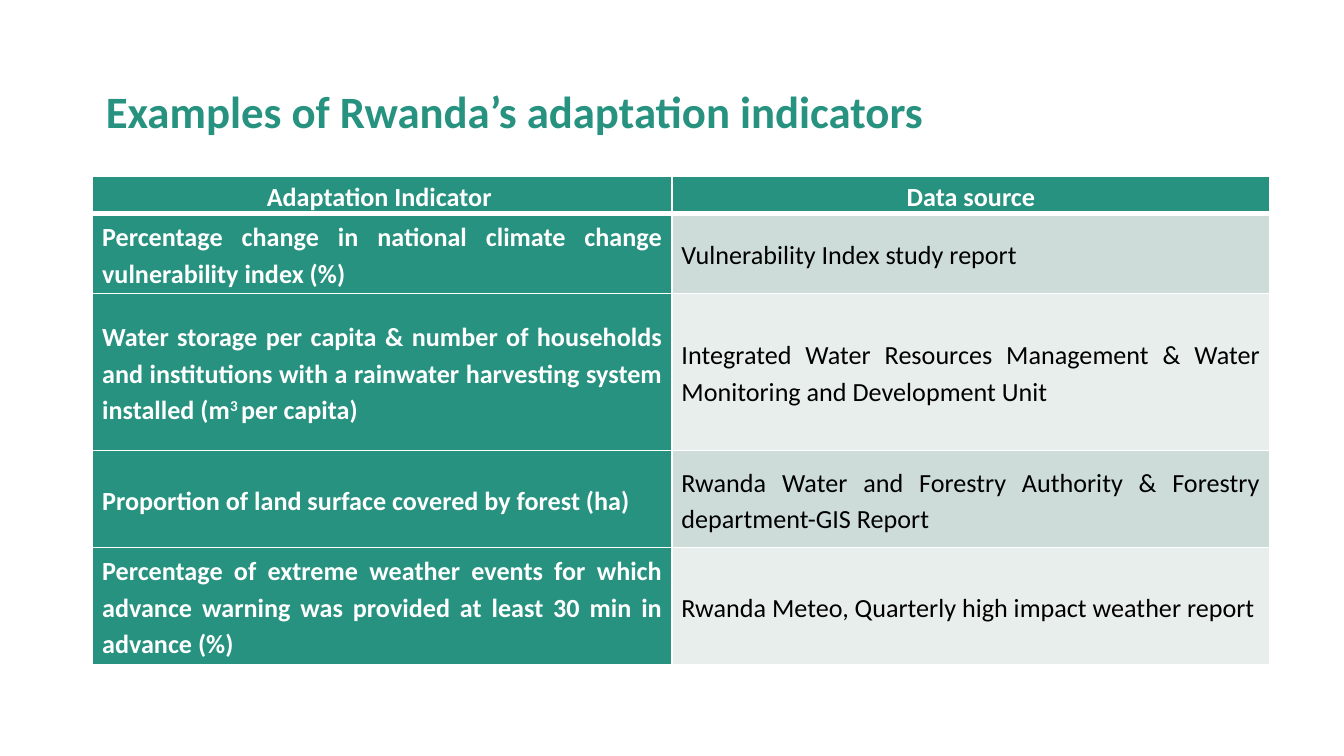
from lxml import etree
from pptx import Presentation
from pptx.dml.color import RGBColor
from pptx.enum.text import MSO_ANCHOR, PP_ALIGN
from pptx.oxml.ns import qn
from pptx.util import Cm, Pt

MIDDLE = MSO_ANCHOR.MIDDLE
LEFT, CENTER, JUSTIFY = PP_ALIGN.LEFT, PP_ALIGN.CENTER, PP_ALIGN.JUSTIFY

GREEN = RGBColor(0x26, 0x92, 0x7F)
SAGE = RGBColor(0xCD, 0xDC, 0xD8)
MIST = RGBColor(0xE8, 0xEE, 0xEC)
WHITE = RGBColor(0xFF, 0xFF, 0xFF)
BLACK = RGBColor(0, 0, 0)

HEADINGS = ("Adaptation Indicator ", "Data source")
INDICATORS = [
    (["Percentage change in national climate change vulnerability index (%)"],
     "Vulnerability Index study report"),
    (["Water storage per capita & number of households and institutions "
      "with a rainwater harvesting system installed (m", "3 ", "per capita)"],
     "Integrated Water Resources Management & Water Monitoring and Development Unit"),
    (["Proportion of land surface covered by forest (ha)"],
     "Rwanda Water and Forestry Authority & Forestry department-GIS Report"),
    (["Percentage of extreme weather events for which advance warning "
      "was provided at least 30 min in advance (%)"],
     "Rwanda Meteo, Quarterly high impact weather report"),
]
COLUMN_WIDTHS = (10.95, 11.3)
ROW_HEIGHTS = (0.71, 1.5, 2.97, 1.83, 2.21)


def apply(target, values):
    for name, value in values.items():
        setattr(target, name, value)


class IndicatorSlide:
    font_name = "Calibri"
    cell_format = {
        "vertical_anchor": MIDDLE,
        "margin_left": Cm(0.18),
        "margin_right": Cm(0.18),
        "margin_top": 0,
        "margin_bottom": 0,
    }

    def __init__(self, slide):
        self.slide = slide

    def wording(self, paragraph, pieces, size, color, bold, layout):
        apply(paragraph, layout)
        for position, piece in enumerate(pieces):
            run = paragraph.add_run()
            run.text = piece
            apply(run.font, {"name": self.font_name, "size": Pt(size), "bold": bold})
            run.font.color.rgb = color
            if position == 1:
                run._r.get_or_add_rPr().set("baseline", "30000")

    def title(self, heading, left, top, width, height):
        frame = self.slide.shapes.add_textbox(
            Cm(left), Cm(top), Cm(width), Cm(height)).text_frame
        apply(frame, {"word_wrap": True, "vertical_anchor": MIDDLE})
        self.wording(frame.paragraphs[0], [heading], 24, GREEN, True,
                     {"alignment": LEFT, "line_spacing": 0.9})

    def borders(self, cell, widths):
        properties = cell._tc.get_or_add_tcPr()
        for position, (side, width) in enumerate(widths.items()):
            line = etree.Element(qn(f"a:ln{side}"), w=str(Pt(width)))
            fill = etree.SubElement(line, qn("a:solidFill"))
            etree.SubElement(fill, qn("a:srgbClr"), val=str(WHITE))
            properties.insert(position, line)

    def cell(self, cell, pieces, fill, color, bold, alignment, widths):
        apply(cell, self.cell_format)
        cell.fill.solid()
        cell.fill.fore_color.rgb = fill
        self.borders(cell, widths)
        self.wording(cell.text_frame.paragraphs[0], pieces, 14, color, bold,
                     {"alignment": alignment, "line_spacing": 1.15,
                      "space_before": Pt(3)})

    def table(self, headings, indicators, left, top):
        table = self.slide.shapes.add_table(
            len(ROW_HEIGHTS), len(COLUMN_WIDTHS), Cm(left), Cm(top),
            Cm(sum(COLUMN_WIDTHS)), Cm(sum(ROW_HEIGHTS))).table
        for column, width in zip(table.columns, COLUMN_WIDTHS):
            column.width = Cm(width)
        for row, height in zip(table.rows, ROW_HEIGHTS):
            row.height = Cm(height)
        thin = {"L": 1, "R": 1, "T": 1, "B": 1}
        for column, heading in enumerate(headings):
            self.cell(table.cell(0, column), [heading], GREEN, WHITE, True,
                      CENTER, {**thin, "B": 3})
        for row, (indicator, source) in enumerate(indicators, 1):
            widths = {**thin, "T": 3} if row == 1 else thin
            band = SAGE if row % 2 else MIST
            self.cell(table.cell(row, 0), indicator, GREEN, WHITE, True,
                      JUSTIFY, widths)
            self.cell(table.cell(row, 1), [source], band, BLACK, False,
                      JUSTIFY, widths)


def main():
    deck = Presentation()
    apply(deck, {"slide_width": Cm(25.4), "slide_height": Cm(14.28)})
    page = IndicatorSlide(deck.slides.add_slide(deck.slide_layouts[6]))
    page.title("Examples of Rwanda’s adaptation indicators", 1.75, 0.76, 21.9, 2.77)
    page.table(HEADINGS, INDICATORS, 1.75, 3.33)
    deck.save("out.pptx")


if __name__ == "__main__":
    main()
